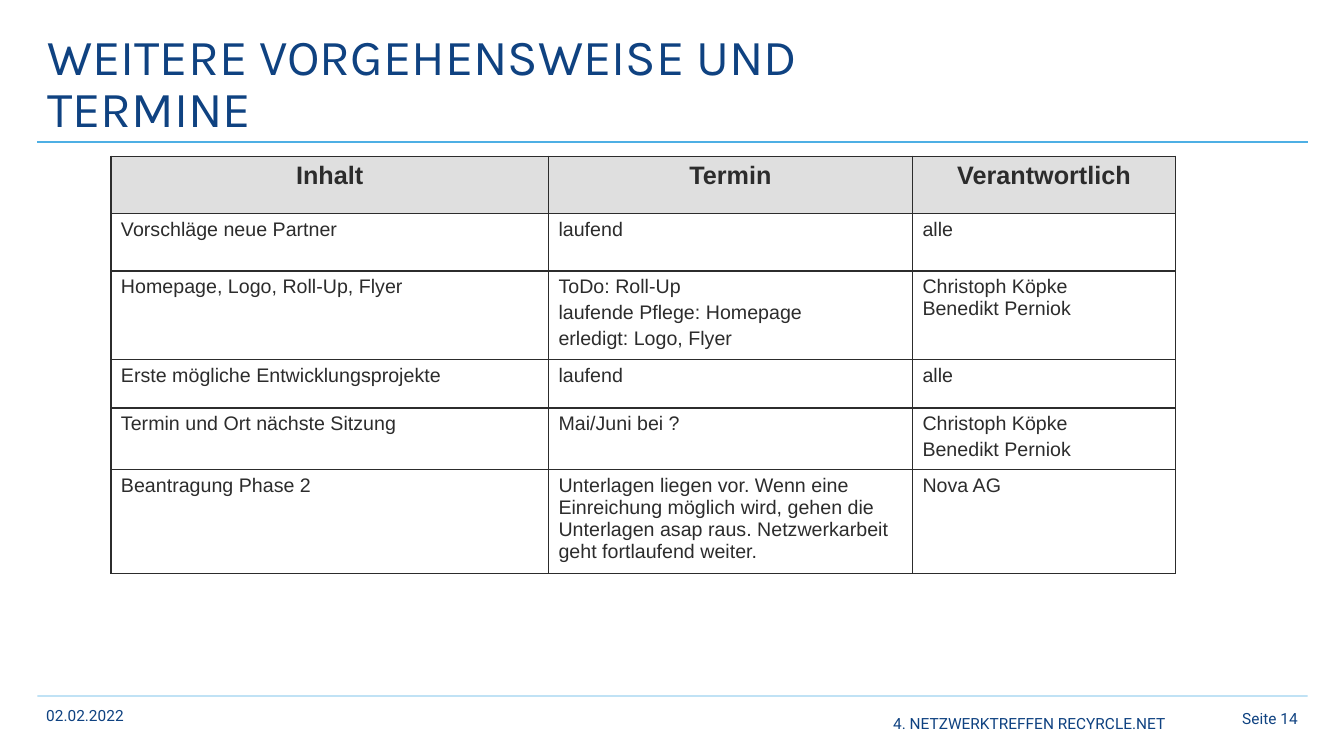
import pptx
import pptx.util
import pptx.dml.color
import pptx.enum.shapes
import pptx.enum.text
import pptx.oxml
import pptx.oxml.ns
from lxml import etree

Inches, Pt = pptx.util.Inches, pptx.util.Pt
ALIGN = pptx.enum.text.PP_ALIGN
ANCHOR = pptx.enum.text.MSO_ANCHOR
COLORS = {"navy": "0F4281", "sky": "4EAFE4", "ink": "2C2C2C", "grey": "C0C0C0"}

FOOTER = dict(size=11, name="Roboto", color="navy")
TITLE = dict(size=36, name="Karla", color="navy")
HEAD = dict(size=18, name="Arial", color="ink", bold=True)
BODY = dict(size=14, name="Arial", color="ink", bold=False)

COLUMNS = [4.34, 3.61, 2.61]
ROW_HEIGHTS = [0.57, 0.57, 0.83, 0.48, 0.57, 0.98]
# "\n" starts a paragraph, "\v" breaks a line within one
ROWS = [
    ["Inhalt", "Termin", "Verantwortlich"],
    ["Vorschläge neue Partner", "laufend", "alle"],
    ["Homepage, Logo, Roll-Up, Flyer",
     "ToDo: Roll-Up\nlaufende Pflege: Homepage\nerledigt: Logo, Flyer",
     "Christoph Köpke\vBenedikt Perniok"],
    ["Erste mögliche Entwicklungsprojekte", "laufend", "alle"],
    ["Termin und Ort nächste Sitzung", "Mai/Juni bei ?",
     "Christoph Köpke\nBenedikt Perniok"],
    ["Beantragung Phase 2",
     "Unterlagen liegen vor. Wenn eine Einreichung möglich wird, gehen die "
     "Unterlagen asap raus. Netzwerkarbeit geht fortlaufend weiter.",
     "Nova AG"],
]


def rgb(name):
    return pptx.dml.color.RGBColor.from_string(COLORS[name])


class SlideBuilder:
    def __init__(self, s):
        self.s = s

    def fill_text(self, tf, text, font, para):
        """Fill a text frame; later paragraphs get 20 % space before."""
        tf.text = text
        for i, p in enumerate(tf.paragraphs):
            for key, value in para.items():
                setattr(p, key, value)
            if i:
                p.space_before = Pt(0.2 * font["size"])
            for r in p.runs:
                for key, value in font.items():
                    if key == "color":
                        r.font.color.rgb = rgb(value)
                    else:
                        setattr(r.font, key, Pt(value) if key == "size" else value)

    def text(self, box, text, font, anchor=ANCHOR.TOP, **para):
        tf = self.s.shapes.add_textbox(*map(Inches, box)).text_frame
        tf.word_wrap = True
        tf.vertical_anchor = anchor
        self.fill_text(tf, text, font, para)

    def bar(self, box, color):
        sp = self.s.shapes.add_shape(
            pptx.enum.shapes.MSO_SHAPE.RECTANGLE, *map(Inches, box))
        sp.shadow.inherit = False
        sp.fill.solid()
        sp.fill.fore_color.rgb = rgb(color)
        sp.line.fill.background()

    def line(self, ends, color, width):
        c = self.s.shapes.add_connector(
            pptx.enum.shapes.MSO_CONNECTOR.STRAIGHT, *map(Inches, ends))
        c.line.color.rgb = rgb(color)
        c.line.width = Pt(width)
        etree.SubElement(c._element.spPr, pptx.oxml.ns.qn("a:effectLst"))

    def borders(self, cell, color, width):
        tc_pr = cell._tc.get_or_add_tcPr()
        for i, side in enumerate(("lnL", "lnR", "lnT", "lnB")):
            tc_pr.insert(i, pptx.oxml.parse_xml(
                f'<a:{side} {pptx.oxml.ns.nsdecls("a")} w="{Pt(width)}"><a:solidFill>'
                f'<a:srgbClr val="{COLORS[color]}"/></a:solidFill></a:{side}>'))

    def shade(self, cell, color, percent):
        """Fill a cell with a partly transparent colour."""
        cell.fill.solid()
        cell.fill.fore_color.rgb = rgb(color)
        clr = cell._tc.tcPr.find(".//" + pptx.oxml.ns.qn("a:srgbClr"))
        etree.SubElement(clr, pptx.oxml.ns.qn("a:alpha"), val=str(percent * 1000))

    def table(self, left, top, columns, heights, rows):
        box = (left, top, sum(columns), sum(heights))
        table = self.s.shapes.add_table(
            len(rows), len(columns), *map(Inches, box)).table
        table.first_row = table.horz_banding = False
        for column, width in zip(table.columns, columns):
            column.width = Inches(width)
        for i, (row, height, texts) in enumerate(zip(table.rows, heights, rows)):
            row.height = Inches(height)
            for cell, text in zip(row.cells, texts):
                if i == 0:
                    self.shade(cell, "grey", 50)
                    self.fill_text(cell.text_frame, text, HEAD,
                                   {"alignment": ALIGN.CENTER})
                else:
                    cell.fill.background()
                    self.fill_text(cell.text_frame, text, BODY, {})
                self.borders(cell, "ink", 1)


def main():
    prs = pptx.Presentation()
    prs.slide_width, prs.slide_height = Inches(13.33), Inches(7.5)
    b = SlideBuilder(prs.slides.add_slide(prs.slide_layouts[6]))

    b.text((0.37, 0.31, 9.04, 1.09), "WEITERE VORGEHENSWEISE UND TERMINE", TITLE,
           anchor=ANCHOR.MIDDLE, line_spacing=0.85)
    b.line((0.37, 1.41, 12.97, 1.41), "sky", 1.5)
    b.table(1.1, 1.55, COLUMNS, ROW_HEIGHTS, ROWS)

    b.bar((0.37, 6.9, 12.6, 0.01), "sky")
    b.text((0.36, 6.98, 0.99, 0.26), "02.02.2022", FOOTER, line_spacing=0.9)
    b.text((8.76, 7.06, 4.4, 0.26), "4. NETZWERKTREFFEN RECYRCLE.NET", FOOTER,
           line_spacing=0.9)
    b.text((11.98, 6.99, 0.99, 0.26), "Seite 14", FOOTER, alignment=ALIGN.RIGHT)
    prs.save("out.pptx")


if __name__ == "__main__":
    main()
